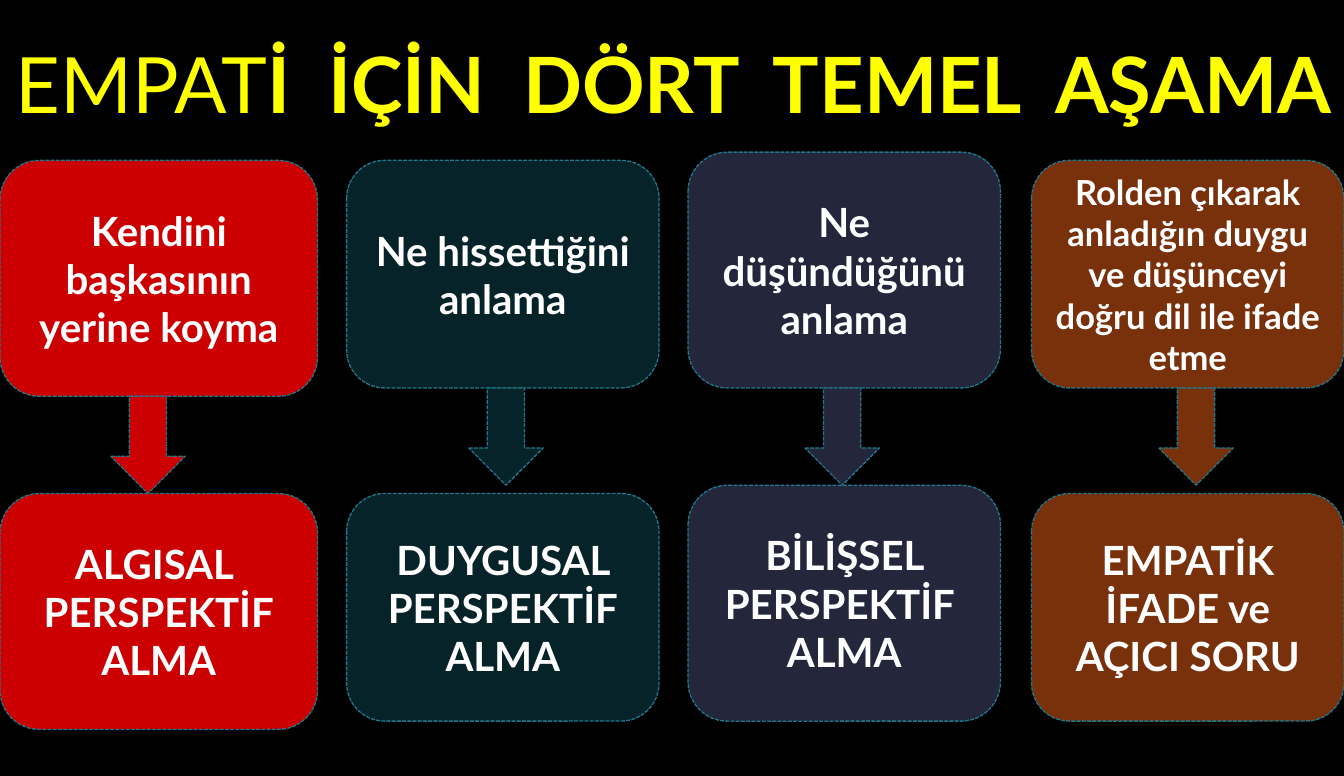
import pptx
import pptx.dml.color
import pptx.enum.dml
import pptx.enum.shapes
import pptx.enum.text
import pptx.util

RGBColor = pptx.dml.color.RGBColor
SHAPES = pptx.enum.shapes.MSO_SHAPE

BLACK = RGBColor(0x00, 0x00, 0x00)
WHITE = RGBColor(0xFF, 0xFF, 0xFF)
YELLOW = RGBColor(0xFF, 0xFF, 0x00)
RED = RGBColor(0xCC, 0x00, 0x00)
DARK_TEAL = RGBColor(0x06, 0x23, 0x29)
NAVY = RGBColor(0x24, 0x26, 0x3C)
BROWN = RGBColor(0x78, 0x31, 0x0B)
OUTLINE = RGBColor(0x21, 0x78, 0x8D)

FONT = "Lato"
EMU_PER_PX = 9144  # 100 px to the inch
SLIDE_WIDTH, SLIDE_HEIGHT = 1299, 750
ROW_STEP = 322
ARROW_WIDTH, ARROW_HEIGHT = 72, 94

# Box of the upper card, arrow offset, colour, step text and size, result lines
STAGES = [
    ((0, 155, 307, 228), 107, RED,
     "Kendini başkasının yerine koyma", 28,
     "ALGISAL \nPERSPEKTİF\nALMA"),
    ((335, 155, 302, 220), 118, DARK_TEAL,
     "Ne hissettiğini anlama", 28,
     "DUYGUSAL PERSPEKTİF\nALMA"),
    ((665, 147, 302, 228), 113, NAVY,
     "Ne düşündüğünü anlama", 28,
     "BİLİŞSEL PERSPEKTİF \nALMA"),
    ((997, 155, 302, 220), 123, BROWN,
     "Rolden çıkarak anladığın duygu ve düşünceyi doğru dil ile ifade etme", 24,
     "EMPATİK İFADE ve AÇICI SORU"),
]


def px(*lengths):
    return [pptx.util.Emu(length * EMU_PER_PX) for length in lengths]


def format_run(run, size, color, bold):
    run.font.name = FONT
    run.font.size = pptx.util.Pt(size)
    run.font.color.rgb = color
    run.font.bold = bold


def add_filled_shape(slide, kind, box, color):
    shape = slide.shapes.add_shape(kind, *px(*box))
    shape.shadow.inherit = False
    shape.fill.solid()
    shape.fill.fore_color.rgb = color
    shape.line.color.rgb = OUTLINE
    shape.line.width = pptx.util.Pt(0.9)
    shape.line.dash_style = pptx.enum.dml.MSO_LINE.SQUARE_DOT
    return shape


def add_card(slide, box, color, text, size):
    shape = add_filled_shape(slide, SHAPES.ROUNDED_RECTANGLE, box, color)
    text_frame = shape.text_frame
    text_frame.word_wrap = True
    text_frame.vertical_anchor = pptx.enum.text.MSO_ANCHOR.MIDDLE
    text_frame.text = text
    for paragraph in text_frame.paragraphs:
        paragraph.alignment = pptx.enum.text.PP_ALIGN.CENTER
        for run in paragraph.runs:
            format_run(run, size, WHITE, True)


def add_title(slide, box):
    text_frame = slide.shapes.add_textbox(*px(*box)).text_frame
    text_frame.word_wrap = True
    text_frame.auto_size = pptx.enum.text.MSO_AUTO_SIZE.SHAPE_TO_FIT_TEXT
    paragraph = text_frame.paragraphs[0]
    paragraph.alignment = pptx.enum.text.PP_ALIGN.CENTER
    for text, bold in [("EMPAT", False), ("İ  İÇİN  DÖRT  TEMEL  AŞAMA", True)]:
        run = paragraph.add_run()
        run.text = text
        format_run(run, 54, YELLOW, bold)


def add_stage(slide, box, arrow_offset, color, step, step_size, result):
    left, top, width, height = box
    add_card(slide, box, color, step, step_size)
    # Arrow hangs from the lower edge of the step card
    arrow_box = (left + arrow_offset, top + height, ARROW_WIDTH, ARROW_HEIGHT)
    add_filled_shape(slide, SHAPES.DOWN_ARROW, arrow_box, color)
    add_card(slide, (left, top + ROW_STEP, width, height), color, result, 28)


def main():
    presentation = pptx.Presentation()
    presentation.slide_width, presentation.slide_height = px(SLIDE_WIDTH, SLIDE_HEIGHT)
    slide = presentation.slides.add_slide(presentation.slide_layouts[6])
    slide.background.fill.solid()
    slide.background.fill.fore_color.rgb = BLACK

    add_title(slide, (3, 30, 1296, 101))
    for stage in STAGES:
        add_stage(slide, *stage)

    presentation.save("out.pptx")


if __name__ == "__main__":
    main()
